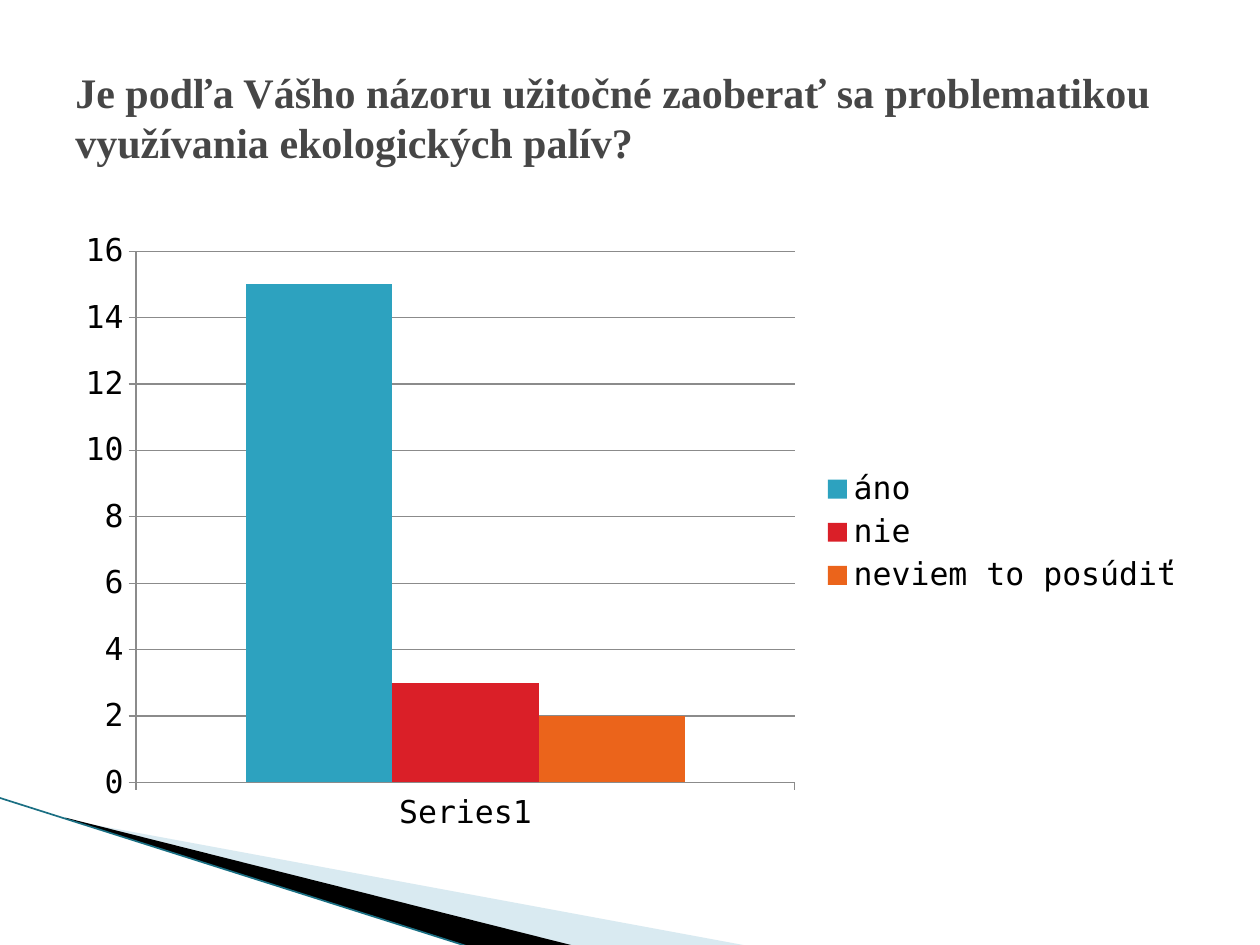
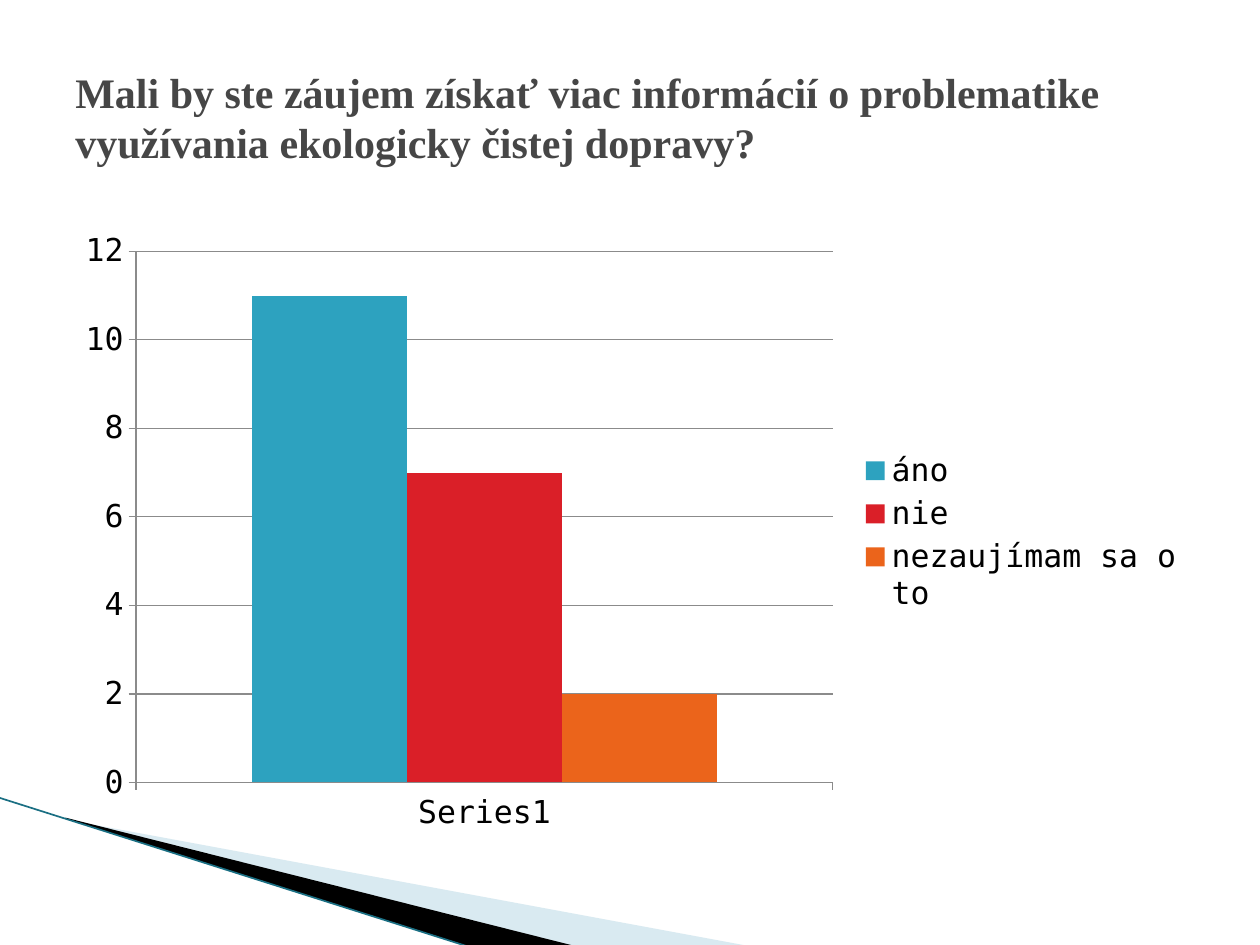
from lxml import etree
from pptx import Presentation
from pptx import util as u
from pptx.chart.data import CategoryChartData
from pptx.dml.color import RGBColor
from pptx.enum import chart as charts, shapes, text
from pptx.oxml.ns import qn

WIDTH, HEIGHT = u.Inches(10), u.Inches(7.5)

TITLE_GREY = RGBColor(0x46, 0x46, 0x46)
AXIS_GREY = RGBColor(0x8B, 0x8B, 0x8B)
BLACK = RGBColor(0, 0, 0)
PALE_BLUE = RGBColor(0xA0, 0xCB, 0xDC)
DARK_TEAL = RGBColor(0x1A, 0x6F, 0x83)
ANSWER_COLOURS = (RGBColor(0x2D, 0xA2, 0xBF), RGBColor(0xDA, 0x1F, 0x28),
                  RGBColor(0xEB, 0x64, 0x1B))

TITLE_FONT = "Times New Roman"
CHART_FONT = "DejaVu Sans Mono"

# Boxes and outlines as percentages of the slide: left, top, width, height
SLIDE_BOX = (0, 0, 100, 100)
TITLE_BOX = (5, 4, 90, 16.67)
CHART_BOX = (5, 23.33, 90, 66)
PALE_FRAME = (7.8, 72.93, 41.6, 21.07)
PALE_WEDGE = [(5.5, 86.8), (59.5, 100.13), (45.6, 100.13), (5.5, 86.67)]
BLACK_FRAME = (-0.6, 84.4, 41.6, 12.27)
BLACK_WEDGE = [(5.2, 86.53), (45.7, 100.13), (37.5, 100.27), (5.3, 86.67)]
EDGE = [(-0.1, 84.4), (37.4, 100.27)]

QUESTIONS = [
    ("Je podľa Vášho názoru užitočné zaoberať sa problematikou "
     "využívania ekologických palív?",
     {"áno": 15, "nie": 3, "neviem to posúdiť": 2}),
    ("Mali by ste záujem získať viac informácií o problematike "
     "využívania ekologicky čistej dopravy?",
     {"áno": 11, "nie": 7, "nezaujímam sa o to": 2}),
]


def place(box):
    """Turn a percentage box into slide lengths."""
    left, top, width, height = box
    return (u.Emu(int(WIDTH * left / 100)), u.Emu(int(HEIGHT * top / 100)),
            u.Emu(int(WIDTH * width / 100)), u.Emu(int(HEIGHT * height / 100)))


def points_in(box, outline):
    left, top, width, height = place(box)
    return [(int(left + width * x / 100), int(top + height * y / 100))
            for x, y in outline]


def reframe(wedge, frame):
    """Give the wedge another frame while its outline stays in place."""
    left, top, width, height = place(frame)
    shift_x, shift_y = wedge.left - left, wedge.top - top
    outline = wedge._element.spPr.find(".//" + qn("a:path"))
    outline.set("w", str(int(width)))
    outline.set("h", str(int(height)))
    for point in outline.iter(qn("a:pt")):
        point.set("x", str(int(point.get("x")) + shift_x))
        point.set("y", str(int(point.get("y")) + shift_y))
    wedge.left, wedge.top, wedge.width, wedge.height = left, top, width, height


def add_wedge(slide, box, outline, frame, colour, opacity=100):
    start, *rest = points_in(box, outline)
    builder = slide.shapes.build_freeform(*start)
    builder.add_line_segments(rest, close=True)
    wedge = builder.convert_to_shape()
    reframe(wedge, frame)
    wedge.shadow.inherit = False
    wedge.line.fill.background()
    wedge.fill.solid()
    wedge.fill.fore_color.rgb = colour
    if opacity < 100:
        tint = wedge.fill._xPr.find(qn("a:solidFill"))[0]
        etree.SubElement(tint, qn("a:alpha")).set("val", str(opacity * 1000))


def add_corner(slide, box):
    # Two wedges and the thin edge below them
    add_wedge(slide, box, PALE_WEDGE, PALE_FRAME, PALE_BLUE, opacity=40)
    add_wedge(slide, box, BLACK_WEDGE, BLACK_FRAME, BLACK)
    start, end = points_in(box, EDGE)
    edge = slide.shapes.add_connector(shapes.MSO_CONNECTOR.STRAIGHT, *start, *end)
    edge.line.color.rgb = DARK_TEAL
    edge.line.width = u.Pt(0.95)
    etree.SubElement(edge._element.spPr, qn("a:effectLst"))


def add_question(slide, box, wording):
    frame = slide.shapes.add_textbox(*place(box)).text_frame
    frame.word_wrap = True
    frame.vertical_anchor = text.MSO_ANCHOR.MIDDLE
    question = frame.paragraphs[0].add_run()
    question.text = wording
    question.font.name = TITLE_FONT
    question.font.size = u.Pt(24)
    question.font.bold = True
    question.font.color.rgb = TITLE_GREY


def add_answers(slide, box, answers):
    data = CategoryChartData()
    data.categories = ["Series1"]
    for answer, votes in answers.items():
        data.add_series(answer, [votes])
    chart = slide.shapes.add_chart(
        charts.XL_CHART_TYPE.COLUMN_CLUSTERED, *place(box), data).chart
    chart.has_title = False
    chart.font.name = CHART_FONT
    chart.font.size = u.Pt(18)
    chart.font.color.rgb = BLACK

    # Columns
    plot = chart.plots[0]
    plot.vary_by_categories = False
    plot.gap_width = 150
    for answer, colour in zip(plot.series, ANSWER_COLOURS):
        answer.format.fill.solid()
        answer.format.fill.fore_color.rgb = colour

    # Axes and gridlines
    chart.value_axis.has_major_gridlines = True
    chart.category_axis.has_major_gridlines = False
    for axis in (chart.value_axis, chart.category_axis):
        axis.major_tick_mark = charts.XL_TICK_MARK.OUTSIDE
        axis.minor_tick_mark = charts.XL_TICK_MARK.NONE
        axis.format.line.color.rgb = AXIS_GREY
    chart.value_axis.major_gridlines.format.line.color.rgb = AXIS_GREY

    # Legend
    chart.has_legend = True
    chart.legend.position = charts.XL_LEGEND_POSITION.RIGHT
    chart.legend.include_in_layout = False


def add_question_slide(deck, wording, answers):
    slide = deck.slides.add_slide(deck.slide_layouts[6])
    add_corner(slide, SLIDE_BOX)
    add_question(slide, TITLE_BOX, wording)
    add_answers(slide, CHART_BOX, answers)


def main():
    deck = Presentation()
    deck.slide_width, deck.slide_height = WIDTH, HEIGHT
    for wording, answers in QUESTIONS:
        add_question_slide(deck, wording, answers)
    deck.save("out.pptx")


if __name__ == "__main__":
    main()
